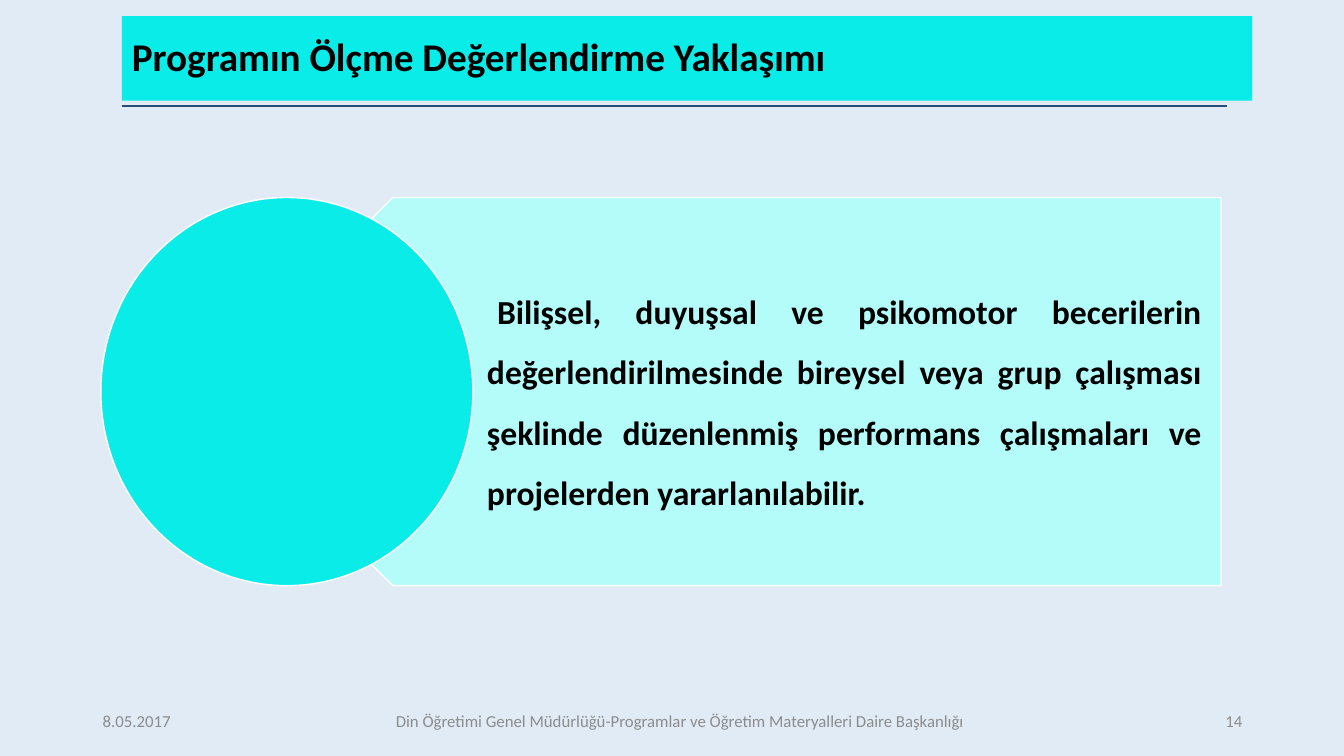
from dataclasses import dataclass

from lxml.etree import SubElement
from pptx import Presentation
from pptx.dml.color import RGBColor
from pptx.enum.shapes import MSO_CONNECTOR, MSO_SHAPE
from pptx.enum.text import MSO_ANCHOR, PP_ALIGN
from pptx.oxml.ns import qn
from pptx.util import Inches, Pt


@dataclass(frozen=True)
class Theme:
    background: str = "E0EBF6"
    accent: str = "0AECE7"
    panel: str = "B4FCFA"
    outline: str = "FFFFFF"
    rule: str = "234F77"
    ink: str = "000000"
    muted: str = "8C8C8C"
    font: str = "Calibri"
    title_size: int = 28
    body_size: int = 24
    footer_size: int = 12


THEME = Theme()


def color(value):
    return RGBColor.from_string(value)


def set_all(target, values):
    for name, value in values.items():
        setattr(target, name, value)


def add_shape(slide, preset, box, fill, outline=None):
    shape = slide.shapes.add_shape(preset, *map(Inches, box))
    shape.shadow.inherit = False
    shape.fill.solid()
    shape.fill.fore_color.rgb = color(fill)
    if outline:
        shape.line.color.rgb = color(outline)
        shape.line.width = Pt(1)
    else:
        shape.line.fill.background()
    return shape


def write(holder, text, size, ink, bold=False, frame_format=None, **paragraph_format):
    frame = holder.text_frame
    set_all(frame, {"word_wrap": True, "vertical_anchor": MSO_ANCHOR.MIDDLE,
                    **(frame_format or {})})
    paragraph = frame.paragraphs[0]
    set_all(paragraph, {"text": text, "alignment": PP_ALIGN.LEFT, **paragraph_format})
    set_all(paragraph.font, {"name": THEME.font, "size": Pt(size), "bold": bold})
    paragraph.font.color.rgb = color(ink)
    return paragraph


def add_header(slide, box, title):
    left, top, width, height = box
    # Title band
    band = add_shape(slide, MSO_SHAPE.RECTANGLE, box, THEME.accent)
    write(band, title, THEME.title_size, THEME.ink, bold=True, line_spacing=0.9)
    # Rule under the band
    rule_y = Inches(top + height + 0.05)
    rule = slide.shapes.add_connector(
        MSO_CONNECTOR.STRAIGHT, Inches(left), rule_y, Inches(left + width - 0.25), rule_y)
    rule.line.color.rgb = color(THEME.rule)
    rule.line.width = Pt(1)
    SubElement(rule._element.spPr, qn("a:effectLst"))


def add_statement(slide, box, statement):
    left, top, width, height = box
    right = left + width
    # Panel pointing left, behind the circle
    panel_left = left + 0.97
    panel = add_shape(slide, MSO_SHAPE.PENTAGON,
                      (panel_left, top, right - panel_left, height),
                      THEME.panel, THEME.outline)
    panel.rotation = 180
    # Statement, kept upright over the panel
    text_left = left + 3.63
    statement_box = slide.shapes.add_textbox(
        *map(Inches, (text_left, top, right - text_left, height)))
    paragraph = write(
        statement_box, statement, THEME.body_size, THEME.ink, bold=True,
        frame_format={"margin_left": 0, "margin_right": Inches(0.19),
                      "margin_top": Inches(0.1), "margin_bottom": Inches(0.1)},
        alignment=PP_ALIGN.JUSTIFY, line_spacing=1.5, space_after=Pt(8))
    indent = paragraph._p.get_or_add_pPr()
    indent.set("marL", str(Inches(0.2)))
    indent.set("indent", str(Inches(0.1)))
    # Circle
    add_shape(slide, MSO_SHAPE.OVAL, (left, top, 3.69, height), THEME.accent, THEME.outline)


def add_footer(slide, box, date, office, number):
    left, top, width, height = box
    parts = (
        (date, 0, 1.25, PP_ALIGN.LEFT),
        (office, 1.58, 8.49, PP_ALIGN.CENTER),
        (number, width - 1.16, 1.16, PP_ALIGN.RIGHT),
    )
    for text, offset, part_width, alignment in parts:
        part = slide.shapes.add_textbox(
            *map(Inches, (left + offset, top, part_width, height)))
        write(part, text, THEME.footer_size, THEME.muted, alignment=alignment)


def main():
    deck = Presentation()
    set_all(deck, {"slide_width": Inches(13.33), "slide_height": Inches(7.5)})
    slide = deck.slides.add_slide(deck.slide_layouts[6])
    slide.background.fill.solid()
    slide.background.fill.fore_color.rgb = color(THEME.background)

    add_header(slide, (1.21, 0.16, 11.21, 0.84), "Programın Ölçme Değerlendirme Yaklaşımı")
    add_statement(
        slide, (1, 1.96, 11.11, 3.85),
        "Bilişsel, duyuşsal ve psikomotor becerilerin değerlendirilmesinde bireysel "
        "veya grup çalışması şeklinde düzenlenmiş performans çalışmaları ve "
        "projelerden yararlanılabilir.")
    add_footer(
        slide, (0.92, 6.95, 11.5, 0.4), "8.05.2017",
        "Din Öğretimi Genel Müdürlüğü-Programlar ve Öğretim Materyalleri Daire Başkanlığı",
        "14")
    deck.save("out.pptx")


if __name__ == "__main__":
    main()
